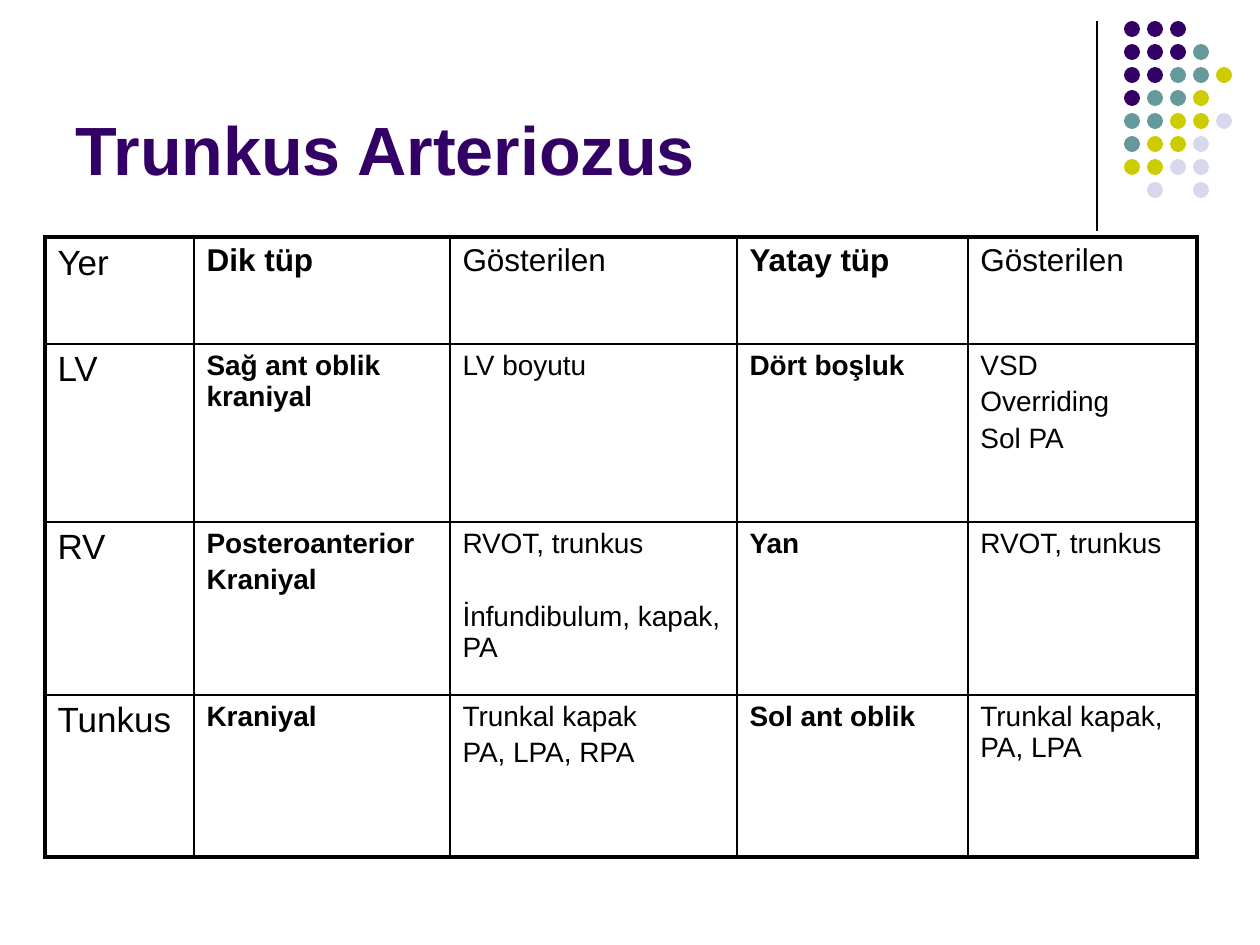
from lxml import etree
from pptx import Presentation
from pptx.dml.color import RGBColor
from pptx.enum.shapes import MSO_CONNECTOR, MSO_SHAPE
from pptx.enum.text import MSO_ANCHOR, PP_ALIGN
from pptx.oxml.ns import qn
from pptx.util import Emu, Pt

ELLIPSE = MSO_SHAPE.OVAL
STRAIGHT = MSO_CONNECTOR.STRAIGHT
BOTTOM = MSO_ANCHOR.BOTTOM
LEFT = PP_ALIGN.LEFT

FONT = "Arial"
BLACK = RGBColor(0x00, 0x00, 0x00)
PURPLE = RGBColor(0x33, 0x00, 0x66)
TEAL = RGBColor(0x66, 0x99, 0x99)
OLIVE = RGBColor(0xCC, 0xCC, 0x00)
LAVENDER = RGBColor(0xD8, 0xD8, 0xEC)

# One letter per dot, one string per row
DOT_COLORS = {"P": PURPLE, "T": TEAL, "O": OLIVE, "L": LAVENDER}
DOT_ROWS = ["PPP", "PPPT", "PPTTO", "PTTO", "TTOOL", "TOOL", "OOLL", " L L"]
DOT_LEFT, DOT_TOP, DOT_PITCH, DOT_SIZE = 1124, 21, 23, 16

COLUMN_WIDTHS = [149, 256, 287, 231, 229]
ROW_HEIGHTS = [107, 178, 173, 162]
BOLD_COLUMNS = (1, 3)
TABLE_ROWS = [
    ["Yer", "Dik tüp", "Gösterilen", "Yatay tüp", "Gösterilen"],
    ["LV", "Sağ ant oblik kraniyal", "LV boyutu", "Dört boşluk",
     "VSD\nOverriding\nSol PA"],
    ["RV", "Posteroanterior\nKraniyal",
     "RVOT, trunkus\nİnfundibulum, kapak, PA", "Yan", "RVOT, trunkus"],
    ["Tunkus", "Kraniyal", "Trunkal kapak\nPA, LPA, RPA", "Sol ant oblik",
     "Trunkal kapak, PA, LPA"],
]
WIDE_GAP_CELL = (2, 2)
INNER_BORDER, OUTER_BORDER = 1, 2.25


def px(length):
    return Emu(round(length * 914400 / 126))


def set_font(paragraph, size, color, bold):
    font = paragraph.font
    font.name = FONT
    font.size = Pt(size)
    font.bold = bold
    font.color.rgb = color


def add_title(slide, text):
    title = slide.shapes.title
    title.left, title.top, title.width, title.height = map(px, (63, 16, 1040, 179))
    frame = title.text_frame
    frame.text = text
    frame.vertical_anchor = BOTTOM
    paragraph = frame.paragraphs[0]
    paragraph.alignment = LEFT
    set_font(paragraph, 39, PURPLE, True)


def add_rule(slide, x, top, bottom):
    rule = slide.shapes.add_connector(STRAIGHT, px(x), px(top), px(x), px(bottom))
    rule.line.color.rgb = BLACK
    rule.line.width = Pt(0.75)
    etree.SubElement(rule._element.spPr, qn("a:effectLst"))


def add_dots(slide):
    group = slide.shapes.add_group_shape()
    for row, letters in enumerate(DOT_ROWS):
        for column, letter in enumerate(letters):
            if letter not in DOT_COLORS:
                continue
            dot = group.shapes.add_shape(
                ELLIPSE, px(DOT_LEFT + column * DOT_PITCH),
                px(DOT_TOP + row * DOT_PITCH), px(DOT_SIZE), px(DOT_SIZE))
            dot.shadow.inherit = False
            dot.fill.solid()
            dot.fill.fore_color.rgb = DOT_COLORS[letter]
            dot.line.fill.background()


def set_borders(cell, row, column):
    last_row, last_column = len(ROW_HEIGHTS) - 1, len(COLUMN_WIDTHS) - 1
    outer_sides = {"L": column == 0, "R": column == last_column,
                   "T": row == 0, "B": row == last_row}
    properties = cell._tc.get_or_add_tcPr()
    for side, is_outer in outer_sides.items():
        width = OUTER_BORDER if is_outer else INNER_BORDER
        line = etree.SubElement(properties, qn(f"a:ln{side}"), w=str(Pt(width)))
        fill = etree.SubElement(line, qn("a:solidFill"))
        etree.SubElement(fill, qn("a:srgbClr"), val=str(BLACK))


def fill_cell(cell, text, row, column):
    set_borders(cell, row, column)
    cell.fill.background()
    cell.text = text
    size = 20 if column == 0 else 18 if row == 0 else 16
    gap = 24 if (row, column) == WIDE_GAP_CELL else 3
    for index, paragraph in enumerate(cell.text_frame.paragraphs):
        set_font(paragraph, size, BLACK, column in BOLD_COLUMNS)
        paragraph.space_before = Pt(gap if index else 0)


def add_view_table(slide):
    frame = slide.shapes.add_table(
        len(ROW_HEIGHTS), len(COLUMN_WIDTHS), px(45), px(237),
        px(sum(COLUMN_WIDTHS)), px(sum(ROW_HEIGHTS)))
    table = frame.table
    table.first_row = False
    table.horz_banding = False
    for column, width in zip(table.columns, COLUMN_WIDTHS):
        column.width = px(width)
    for row, height in zip(table.rows, ROW_HEIGHTS):
        row.height = px(height)
    for row, texts in enumerate(TABLE_ROWS):
        for column, text in enumerate(texts):
            fill_cell(table.cell(row, column), text, row, column)


def main():
    presentation = Presentation()
    presentation.slide_width = px(1260)
    presentation.slide_height = px(945)
    slide = presentation.slides.add_slide(presentation.slide_layouts[5])

    # Corner decoration
    add_rule(slide, 1097, 21, 231)
    add_dots(slide)

    # Content
    add_title(slide, "Trunkus Arteriozus")
    add_view_table(slide)

    presentation.save("out.pptx")


if __name__ == "__main__":
    main()
